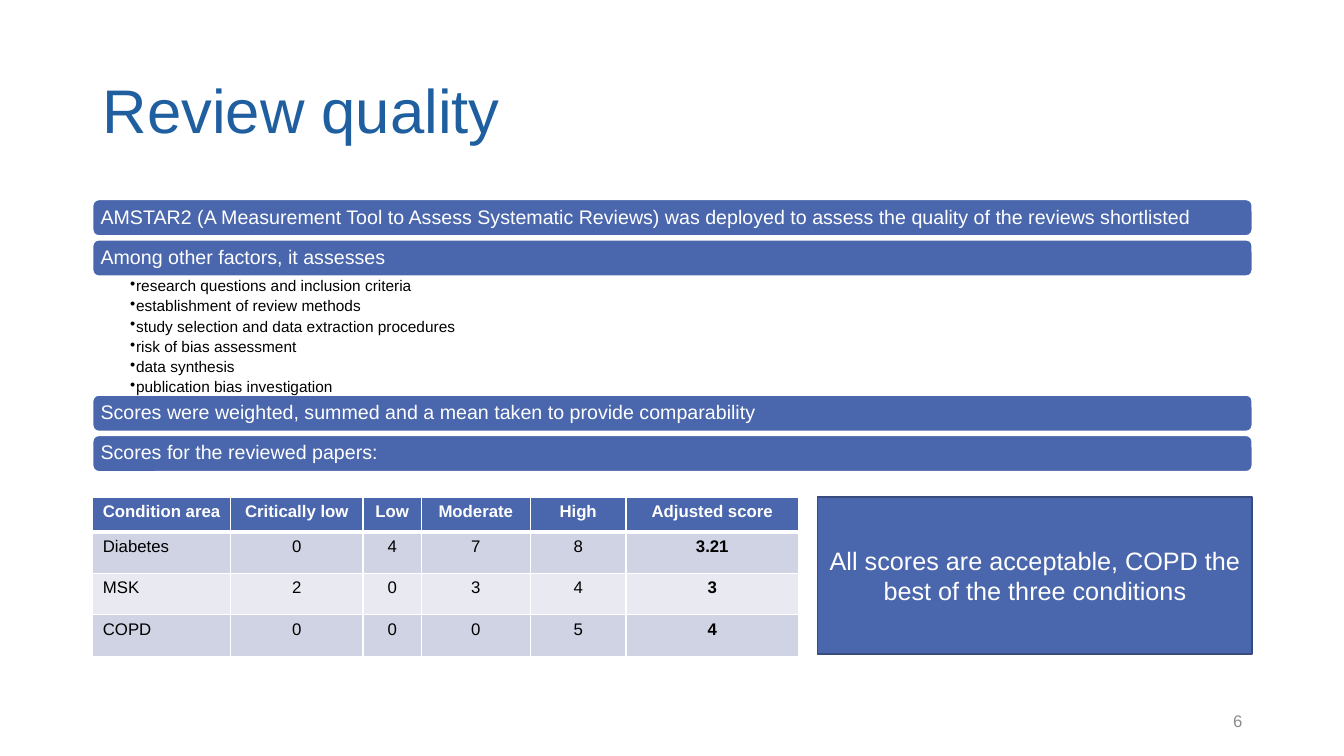
from dataclasses import dataclass

from lxml import etree
from pptx import Presentation
from pptx.dml.color import RGBColor as RGB
from pptx.enum.shapes import MSO_SHAPE as SHAPE
from pptx.enum.text import MSO_ANCHOR as ANCHOR, PP_ALIGN as ALIGN
from pptx.oxml.ns import qn
from pptx.util import Inches, Pt


@dataclass(frozen=True)
class Theme:
    font: str = "Arial"
    title: RGB = RGB(0x1F, 0x5F, 0xA0)
    blue: RGB = RGB(0x4A, 0x66, 0xAC)
    outline: RGB = RGB(0x37, 0x4B, 0x7F)
    dark_band: RGB = RGB(0xD0, 0xD3, 0xE3)
    light_band: RGB = RGB(0xE9, 0xEA, 0xF1)
    white: RGB = RGB(0xFF, 0xFF, 0xFF)
    black: RGB = RGB(0, 0, 0)
    grey: RGB = RGB(0x8C, 0x8C, 0x8C)
    title_size: int = 44
    conclusion_size: int = 18
    bar_size: int = 14
    table_size: int = 12
    factor_size: int = 11
    number_size: int = 12


THEME = Theme()
LEFT, WIDTH = 0.92, 11.5
BAR_HEIGHT = 0.36
TABLE_TOP, TABLE_HEIGHT = 4.93, 1.56


def write(frame, text, size, color, align=ALIGN.LEFT, bold=False, spacing=1.0):
    """Fill a text frame and format all of its paragraphs alike."""
    frame.text = text
    frame.word_wrap = True
    for paragraph in frame.paragraphs:
        paragraph.alignment = align
        paragraph.line_spacing = spacing
        for run in paragraph.runs:
            run.font.name = THEME.font
            run.font.size = Pt(size)
            run.font.bold = bold
            run.font.color.rgb = color


def add_block(kind, left, top, width, height, line_color):
    block = slide.shapes.add_shape(
        kind, Inches(left), Inches(top), Inches(width), Inches(height))
    block.shadow.inherit = False
    block.fill.solid()
    block.fill.fore_color.rgb = THEME.blue
    block.line.color.rgb = line_color
    block.line.width = Pt(1)
    block.text_frame.vertical_anchor = ANCHOR.MIDDLE
    return block


prs = Presentation()
prs.slide_width, prs.slide_height = Inches(13.33), Inches(7.5)
slide = prs.slides.add_slide(prs.slide_layouts[6])

# Title
title = slide.shapes.add_textbox(
    Inches(LEFT), Inches(0.4), Inches(WIDTH), Inches(1.45)).text_frame
title.vertical_anchor = ANCHOR.MIDDLE
write(title, "Review quality", THEME.title_size, THEME.title, spacing=0.9)

# Statement bars
statements = [
    (1.98, "AMSTAR2 (A Measurement Tool to Assess Systematic Reviews) was "
           "deployed to assess the quality of the reviews shortlisted"),
    (2.38, "Among other factors, it assesses"),
    (3.92, "Scores were weighted, summed and a mean taken to provide comparability"),
    (4.32, "Scores for the reviewed papers:"),
]
for top, statement in statements:
    bar = add_block(SHAPE.ROUNDED_RECTANGLE, LEFT, top, WIDTH, BAR_HEIGHT, THEME.white)
    frame = bar.text_frame
    frame.margin_left = frame.margin_right = Inches(0.06)
    frame.margin_top = frame.margin_bottom = Inches(0.04)
    write(frame, statement, THEME.bar_size, THEME.white, spacing=0.9)

# Assessed factors
factors = [
    "research questions and inclusion criteria",
    "establishment of review methods",
    "study selection and data extraction procedures",
    "risk of bias assessment",
    "data synthesis",
    "publication bias investigation",
]
factor_list = slide.shapes.add_textbox(
    Inches(LEFT), Inches(2.74), Inches(WIDTH), Inches(1.17)).text_frame
factor_list.margin_left, factor_list.margin_right = Inches(0.37), Inches(0.11)
factor_list.margin_top = factor_list.margin_bottom = Inches(0.02)
write(factor_list, "\n".join(factors), THEME.factor_size, THEME.black, spacing=0.9)
for factor in factor_list.paragraphs:
    factor.space_after = Pt(2.6)
    properties = factor._p.get_or_add_pPr()
    properties.set("marL", str(Inches(0.06)))
    properties.set("indent", str(Inches(-0.06)))
    etree.SubElement(properties, qn("a:buChar"), char="•")

# Score table
scores = [
    ["Condition area", "Critically low", "Low", "Moderate", "High", "Adjusted score"],
    ["Diabetes", "0", "4", "7", "8", "3.21"],
    ["MSK", "2", "0", "3", "4", "3"],
    ["COPD", "0", "0", "0", "5", "4"],
]
column_widths = [1.37, 1.31, 0.58, 1.08, 0.95, 1.71]
row_heights = [0.35, 0.41, 0.41, 0.41]
row_fills = [THEME.blue, THEME.dark_band, THEME.light_band, THEME.dark_band]
table = slide.shapes.add_table(
    len(scores), len(column_widths), Inches(LEFT), Inches(TABLE_TOP),
    Inches(sum(column_widths)), Inches(TABLE_HEIGHT)).table
for column, width in zip(table.columns, column_widths):
    column.width = Inches(width)
for r, row in enumerate(scores):
    table.rows[r].height = Inches(row_heights[r])
    is_header = r == 0
    for c, value in enumerate(row):
        cell = table.cell(r, c)
        write(cell.text_frame, value, THEME.table_size,
              THEME.white if is_header else THEME.black,
              align=ALIGN.CENTER if c else ALIGN.LEFT,
              bold=is_header or c == len(row) - 1)
        cell.fill.solid()
        cell.fill.fore_color.rgb = row_fills[r]
        borders = {"a:lnL": 1, "a:lnR": 1,
                   "a:lnT": 3 if r == 1 else 1, "a:lnB": 3 if is_header else 1}
        for position, (side, weight) in enumerate(borders.items()):
            border = etree.Element(qn(side), w=str(Pt(weight)))
            border_fill = etree.SubElement(border, qn("a:solidFill"))
            etree.SubElement(border_fill, qn("a:srgbClr"), val=str(THEME.white))
            cell._tc.get_or_add_tcPr().insert(position, border)

# Conclusion
conclusion = add_block(SHAPE.RECTANGLE, 8.11, TABLE_TOP, 4.31, TABLE_HEIGHT, THEME.outline)
write(conclusion.text_frame,
      "All scores are acceptable, COPD the best of the three conditions",
      THEME.conclusion_size, THEME.white, align=ALIGN.CENTER)

# Page number
page_number = slide.shapes.add_textbox(
    Inches(9.42), Inches(6.95), Inches(3), Inches(0.4)).text_frame
page_number.vertical_anchor = ANCHOR.MIDDLE
write(page_number, "6", THEME.number_size, THEME.grey, align=ALIGN.RIGHT)

prs.save("out.pptx")
